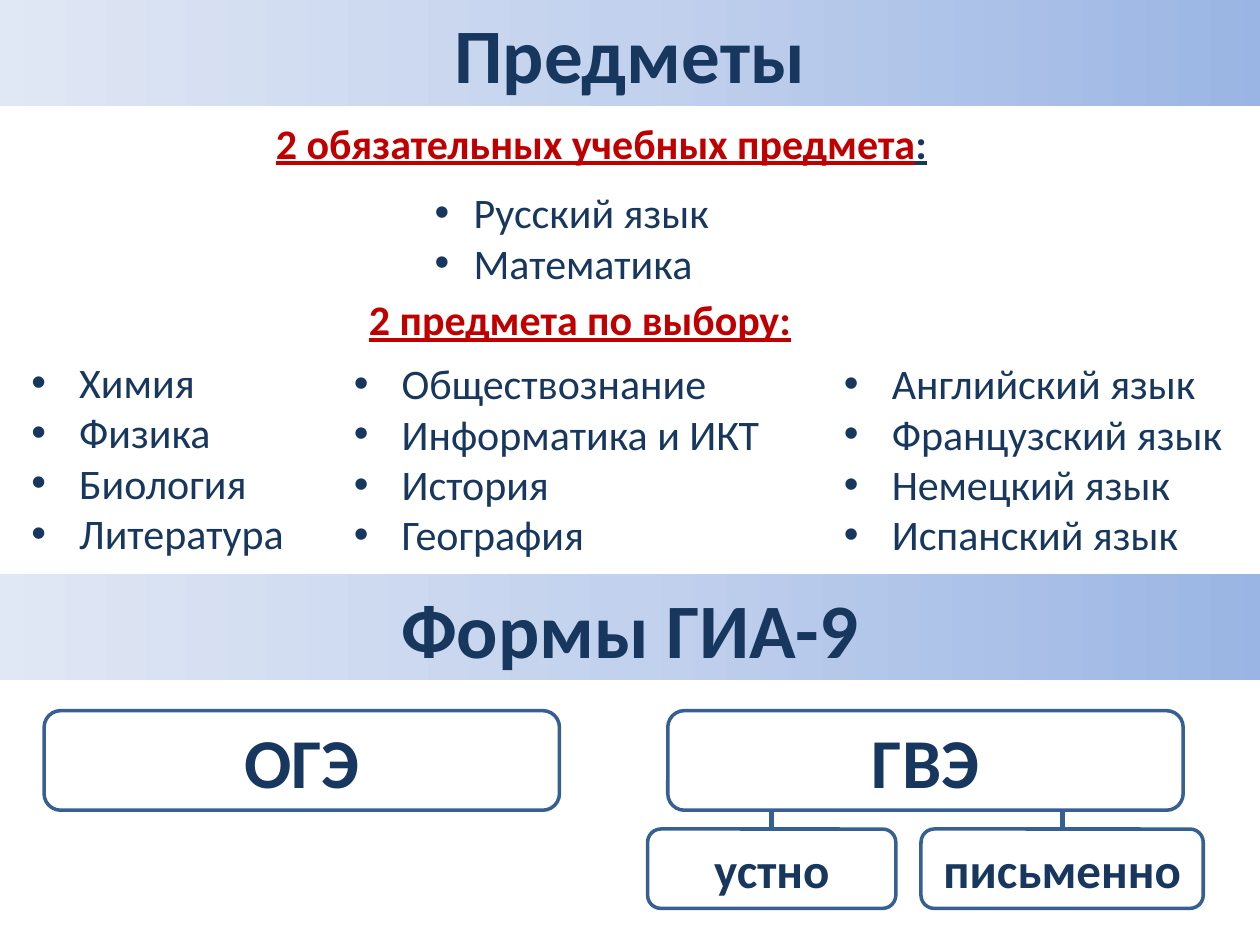
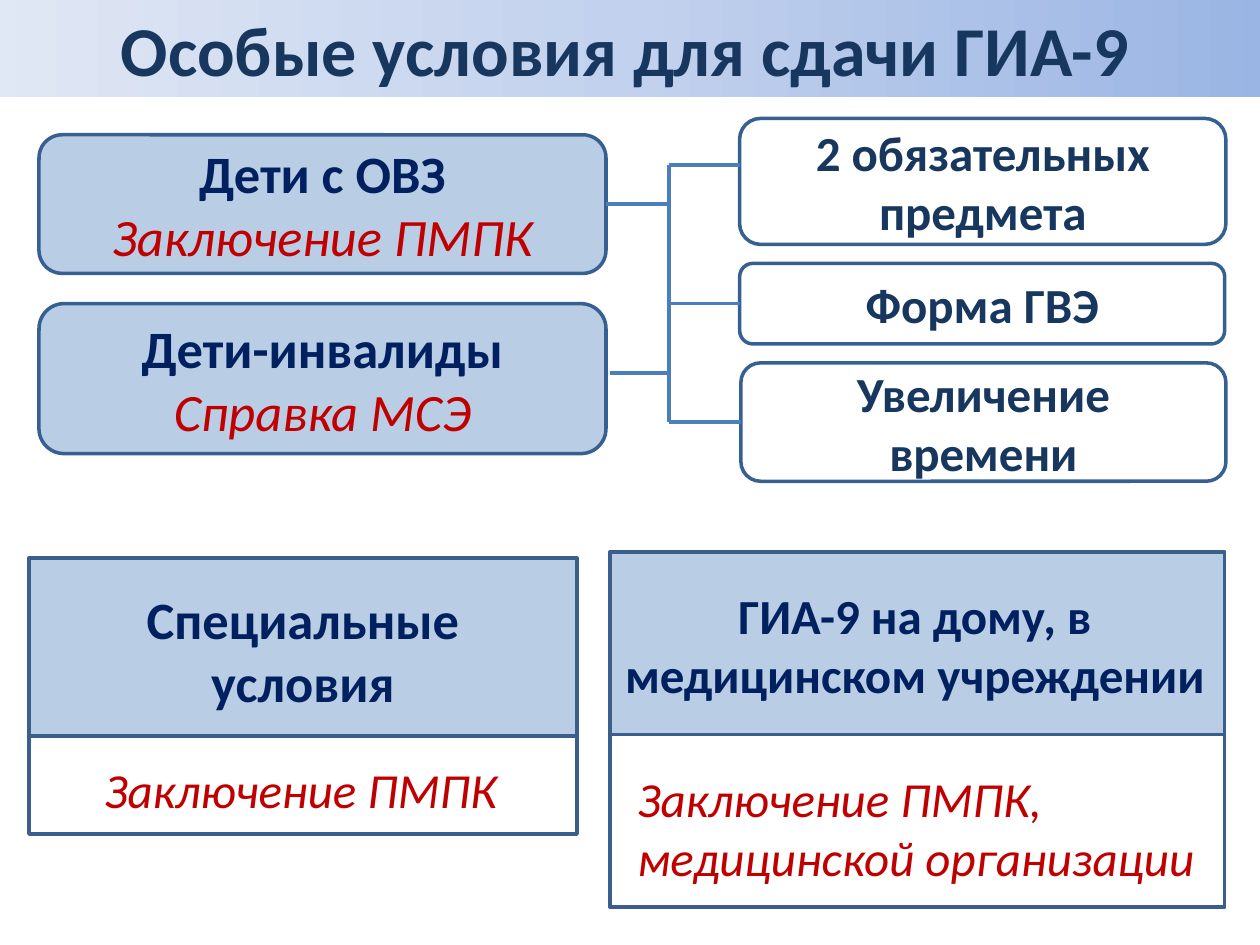
from copy import deepcopy

from lxml.etree import SubElement
from pptx import Presentation
from pptx.dml.color import RGBColor
from pptx.enum.shapes import MSO_CONNECTOR, MSO_SHAPE
from pptx.enum.text import MSO_ANCHOR, MSO_AUTO_SIZE, PP_ALIGN
from pptx.oxml.ns import qn
from pptx.util import Inches, Pt

FONT = "Calibri"
INK, NAVY, RED = "17375E", "002060", "C00000"
PALE, EDGE, FRAME, LINK = "B9CDE5", "376092", "3A5F8C", "4B7EBC"
BAND = [(0, "9AB5E4"), (0.5, "C2D1ED"), (1, "E1E8F5")]
CENTER = PP_ALIGN.CENTER


def rgb(value):
    return RGBColor.from_string(value)


def write(tf, text, size=24, color=INK, bold=False, italic=False, underline=False,
          align=PP_ALIGN.LEFT, indent=None, hang=0.38, after=None, same_line=False):
    p = tf.paragraphs[-1]
    if p.runs and not same_line:
        p = tf.add_paragraph()
    p.alignment = align
    if after is not None:
        p.space_after = Pt(after)
    if indent is not None:
        pPr = p._p.get_or_add_pPr()
        pPr.set("marL", str(Inches(indent)))
        pPr.set("indent", str(-Inches(hang)))
        SubElement(pPr, qn("a:buFont"), typeface="Arial")
        SubElement(pPr, qn("a:buChar"), char="•")
    r = p.add_run()
    r.text = text
    font = r.font
    font.name, font.size, font.color.rgb = FONT, Pt(size), rgb(color)
    font.bold, font.italic, font.underline = bold, italic, underline


class Deck:
    """Holds the shared style and the slide being built."""

    def __init__(self):
        self.prs = Presentation()
        self.prs.slide_width, self.prs.slide_height = Inches(10), Inches(7.5)
        self.s = None

    def slide(self, title, x, w, h, size):
        self.s = self.prs.slides.add_slide(self.prs.slide_layouts[5])
        sp = self.s.shapes.title
        sp.left, sp.top, sp.width, sp.height = map(Inches, (x, 0, w, h))
        self.style_band(sp, title, size)

    def band(self, title, x, y, w, h, size):
        sp = self.shape(MSO_SHAPE.RECTANGLE, x, y, w, h)
        sp.line.fill.background()
        self.style_band(sp, title, size)

    def style_band(self, sp, title, size):
        sp.fill.gradient()
        sp.fill.gradient_angle = 180
        stops = sp.fill.gradient_stops
        last = stops[1]._gs
        last.addnext(deepcopy(last))
        for stop, (position, color) in zip(sp.fill.gradient_stops, BAND):
            stop.position = position
            stop.color.rgb = rgb(color)
        tf = sp.text_frame
        tf.word_wrap, tf.auto_size = True, MSO_AUTO_SIZE.NONE
        tf.vertical_anchor = MSO_ANCHOR.MIDDLE
        write(tf, title, size, bold=True, align=CENTER)

    def shape(self, kind, x, y, w, h, fill=None, line=EDGE):
        sp = self.s.shapes.add_shape(kind, *map(Inches, (x, y, w, h)))
        sp.shadow.inherit = False
        if fill:
            sp.fill.solid()
            sp.fill.fore_color.rgb = rgb(fill)
        else:
            sp.fill.background()
        sp.line.color.rgb, sp.line.width = rgb(line), Pt(2)
        return sp

    def box(self, text, x, y, w, h, size=28, color=INK, fill=None, note=None):
        sp = self.shape(MSO_SHAPE.ROUNDED_RECTANGLE, x, y, w, h, fill)
        tf = sp.text_frame
        tf.word_wrap, tf.vertical_anchor = True, MSO_ANCHOR.MIDDLE
        write(tf, text, size, color, bold=True, align=CENTER)
        if note:
            write(tf, note, size, RED, italic=True, align=CENTER)
        return sp

    def text(self, lines, x, y, w, h, wrap=True, **fmt):
        tf = self.s.shapes.add_textbox(*map(Inches, (x, y, w, h))).text_frame
        tf.word_wrap = wrap
        for line in lines:
            write(tf, line, **fmt)
        return tf

    def panel(self, x, y, w, h, fill=None):
        return self.shape(MSO_SHAPE.RECTANGLE, x, y, w, h, fill, FRAME)

    def line(self, x1, y1, x2, y2, color=LINK, width=2, begin=None, end=None):
        c = self.s.shapes.add_connector(MSO_CONNECTOR.STRAIGHT,
                                        *map(Inches, (x1, y1, x2, y2)))
        c.line.color.rgb, c.line.width = rgb(color), Pt(width)
        SubElement(c._element.spPr, qn("a:effectLst"))
        if begin:
            c.begin_connect(*begin)
        if end:
            c.end_connect(*end)


def subjects(deck):
    deck.slide("Предметы", -0.12, 10.24, 0.84, 44)
    heading = dict(color=RED, bold=True, underline=True)
    tf = deck.text(["2 обязательных учебных предмета"], 2.09, 0.88, 6.22, 1.46,
                   after=11, **heading)
    write(tf, ":", bold=True, underline=True, same_line=True)
    for subject in ("Русский язык", "Математика"):
        write(tf, subject, indent=1.57, hang=0.31)
    deck.text(["2 предмета по выбору:"], 2.83, 2.28, 3.59, 0.5, wrap=False, **heading)
    electives = [
        (0.15, 2.78, 2.35, ["Химия", "Физика", "Биология", "Литература"]),
        (2.71, 2.79, 3.86, ["Обществознание", "Информатика и ИКТ", "История", "География"]),
        (6.6, 2.79, 3.64, ["Английский язык", "Французский язык", "Немецкий язык",
                           "Испанский язык"]),
    ]
    for x, y, w, names in electives:
        deck.text(names, x, y, w, 2.02, indent=0.38)

    deck.band("Формы ГИА-9", -0.12, 4.56, 10.24, 0.84, 44)
    for name, x in (("ОГЭ", 0.35), ("ГВЭ", 5.3)):
        deck.box(name, x, 5.64, 4.09, 0.79, size=40)
    for name, x, w in (("устно", 5.14, 1.97), ("письменно", 7.31, 2.24)):
        sp = deck.box(name, x, 6.58, w, 0.63)
        middle = x + w / 2
        deck.line(middle, 6.43, middle, 6.58, EDGE, 2.75, end=(sp, 0))


def conditions(deck):
    deck.slide("Особые условия для сдачи ГИА-9", -0.2, 10.32, 0.77, 40)
    deck.box("2 обязательных предмета", 5.87, 0.94, 3.86, 1)
    form = deck.box("Форма ГВЭ", 5.87, 2.09, 3.85, 0.64)
    time = deck.box("Увеличение времени", 5.88, 2.88, 3.85, 0.94)
    group = dict(size=30, color=NAVY, fill=PALE)
    deck.box("Дети-инвалиды", 0.31, 2.41, 4.5, 1.19, note="Справка МСЭ", **group)
    health = deck.box("Дети с ОВЗ", 0.31, 1.07, 4.5, 1.1, note="Заключение ПМПК", **group)

    trunk = 5.31
    deck.line(trunk, 1.31, trunk, 3.35)
    deck.line(4.81, 1.62, trunk, 1.62, begin=(health, 3))
    deck.line(4.84, 2.96, trunk, 2.96)
    deck.line(trunk, 1.31, 5.87, 1.31)
    deck.line(trunk, 2.41, 5.87, 2.41, end=(form, 1))
    deck.line(trunk, 3.35, 5.88, 3.35, end=(time, 1))

    head = dict(color=NAVY, bold=True, align=CENTER)
    paper = dict(size=28, color=RED, italic=True)
    deck.panel(0.23, 4.43, 4.35, 1.41, PALE)
    deck.text(["Специальные условия"], 0.36, 4.61, 4.09, 1.11, size=30, **head)
    deck.panel(0.23, 5.84, 4.35, 0.78)
    deck.text(["Заключение ПМПК"], 0.73, 5.98, 3.35, 0.57, wrap=False, **paper)
    deck.panel(4.84, 4.38, 4.88, 1.45, PALE)
    deck.text(["ГИА-9 на дому, в медицинском учреждении"], 4.81, 4.6, 4.9, 1.04,
              size=28, **head)
    deck.panel(4.84, 5.83, 4.88, 1.37)
    deck.text(["Заключение ПМПК,", "медицинской организации"], 4.96, 6.05, 4.88, 1.04,
              **paper)


def main():
    deck = Deck()
    subjects(deck)
    conditions(deck)
    deck.prs.save("out.pptx")


if __name__ == "__main__":
    main()
